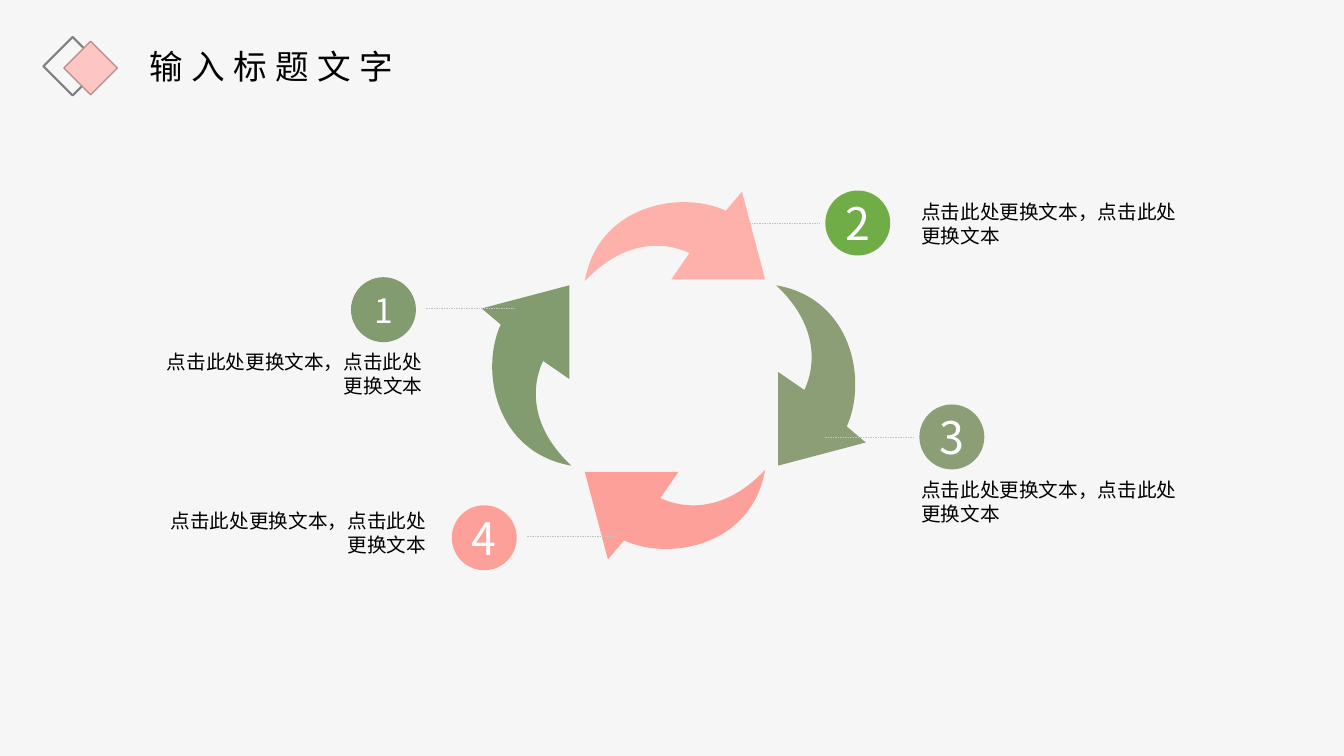
from lxml.etree import Element, SubElement
from pptx import Presentation
from pptx.dml.color import RGBColor
from pptx.enum.dml import MSO_LINE
from pptx.enum.shapes import MSO_CONNECTOR, MSO_SHAPE
from pptx.enum.text import MSO_ANCHOR, PP_ALIGN
from pptx.oxml.ns import qn
from pptx.util import Pt

TITLE = "输入标题文字"
BODY = "点击此处更换文本，点击此处更换文本"

THEME = {
    "font": "Noto Sans CJK SC",
    "background": "F6F6F6", "text": "000000", "number": "FFFFFF", "leader": "C2C2C2",
    "title_size": 24, "body_size": 14,
}

# left, top, side, fill, line colour, line width
DIAMONDS = [
    (31, 26.4, 41.8, None, "808080", 1.5),
    (45.6, 29.5, 38.2, "FDC6C2", "BB9290", 1),
]

# One arrow in its own box: corner points, then cubic curves
ARROW_WIDTH, ARROW_HEIGHT = 128.8, 64
ARROW_CORNERS = [(112.3, 0), (128.8, 62.6), (61.9, 62.6), (74.8, 43.9)]
ARROW_CURVES = [
    [(66.2, 39.6), (33.8, 28), (0, 64)],
    [(9.4, 10), (67.6, -1.5), (100.8, 13.6)],
]
# centre x, centre y, fill; each is turned a quarter further clockwise
ARROWS = [
    (482.1, 168.9, "FDB1AA"),
    (586.4, 268.2, "8B9E76"),
    (482.1, 367.6, "FDA09A"),
    (376.1, 268.2, "829C6F"),
]

# number, size, fill, circle (left, top), leader (left, y), text (left, top), alignment
CALLOUTS = [
    ("1", 24, "829C6F", (250.7, 198), (304.6, 220.3), (98.6, 250.3), PP_ALIGN.RIGHT),
    ("4", 32, "FDA09A", (322.7, 360.9), (376.6, 383.2), (101.3, 363.8), PP_ALIGN.RIGHT),
    ("2", 32, "70AD47", (589.5, 136.1), (522.7, 159.3), (650.9, 143), PP_ALIGN.LEFT),
    ("3", 32, "8B9E76", (656.7, 288.9), (589.5, 312.3), (650.9, 341.4), PP_ALIGN.LEFT),
]
CIRCLE = 46.4
LEADER_LENGTH = 63.3
BODY_WIDTH, BODY_HEIGHT = 210.2, 52


def color(name):
    return RGBColor.from_string(THEME.get(name, name))


def write(shape, text, size, ink="text", align=PP_ALIGN.LEFT,
          anchor=MSO_ANCHOR.TOP, insets=(7.2, 0), spacing=0):
    frame = shape.text_frame
    frame.word_wrap = True
    frame.vertical_anchor = anchor
    frame.margin_left = frame.margin_right = Pt(insets[0])
    frame.margin_top = frame.margin_bottom = Pt(insets[1])
    paragraph = frame.paragraphs[0]
    paragraph.alignment = align
    run = paragraph.add_run()
    run.text = text
    run.font.size = Pt(size)
    run.font.color.rgb = color(ink)
    run.font.name = THEME["font"]
    properties = run._r.get_or_add_rPr()
    SubElement(properties, qn("a:ea"), typeface=THEME["font"])
    if spacing:
        properties.set("spc", str(spacing * 100))


def paint(shape, fill=None, line=None, width=1):
    shape.shadow.inherit = False
    if fill:
        shape.fill.solid()
        shape.fill.fore_color.rgb = color(fill)
    else:
        shape.fill.background()
    if line:
        shape.line.color.rgb = color(line)
        shape.line.width = Pt(width)
    else:
        shape.line.fill.background()


def bend(shape, curves):
    """Turn the last straight segments of a freeform into cubic curves."""
    segments = list(shape._element.iter(qn("a:lnTo")))[-len(curves):]
    for segment, (first, second, _) in zip(segments, curves):
        segment.tag = qn("a:cubicBezTo")
        for index, (x, y) in enumerate((first, second)):
            segment.insert(index, Element(qn("a:pt"), x=str(int(Pt(x))), y=str(int(Pt(y)))))


def add_arrow(slide, center_x, center_y, fill, rotation):
    left, top = center_x - ARROW_WIDTH / 2, center_y - ARROW_HEIGHT / 2
    anchors = ARROW_CORNERS + [curve[-1] for curve in ARROW_CURVES]
    placed = [(Pt(left + x), Pt(top + y)) for x, y in anchors]
    builder = slide.shapes.build_freeform(*placed[0])
    builder.add_line_segments(placed[1:], close=True)
    arrow = builder.convert_to_shape()
    bend(arrow, ARROW_CURVES)
    arrow.rotation = rotation
    paint(arrow, fill)


def add_leader(shapes, left, y):
    leader = shapes.add_connector(
        MSO_CONNECTOR.STRAIGHT, Pt(left), Pt(y), Pt(left + LEADER_LENGTH), Pt(y))
    leader.line.color.rgb = color("leader")
    leader.line.width = Pt(0.25)
    leader.line.dash_style = MSO_LINE.DASH
    SubElement(leader._element.spPr, qn("a:effectLst"))


def add_callout(slide, number, size, fill, circle_at, leader_at, text_at, align):
    shapes = slide.shapes.add_group_shape().shapes
    add_leader(shapes, *leader_at)
    circle = shapes.add_shape(
        MSO_SHAPE.OVAL, *map(Pt, circle_at), Pt(CIRCLE), Pt(CIRCLE))
    paint(circle, fill)
    write(circle, number, size, ink="number", align=PP_ALIGN.CENTER,
          anchor=MSO_ANCHOR.MIDDLE, insets=(0, 0))
    body = shapes.add_textbox(*map(Pt, text_at), Pt(BODY_WIDTH), Pt(BODY_HEIGHT))
    write(body, BODY, THEME["body_size"], align=align)


def main():
    presentation = Presentation()
    presentation.slide_width, presentation.slide_height = Pt(960), Pt(540)
    slide = presentation.slides.add_slide(presentation.slide_layouts[6])
    slide.background.fill.solid()
    slide.background.fill.fore_color.rgb = color("background")

    emblem = slide.shapes.add_group_shape().shapes
    for left, top, side, fill, line, width in DIAMONDS:
        diamond = emblem.add_shape(
            MSO_SHAPE.DIAMOND, Pt(left), Pt(top), Pt(side), Pt(side))
        paint(diamond, fill, line, width)
    for turns, arrow in enumerate(ARROWS):
        add_arrow(slide, *arrow, rotation=90 * turns)
    for callout in CALLOUTS:
        add_callout(slide, *callout)
    title = slide.shapes.add_textbox(Pt(99.4), Pt(29.5), Pt(259.2), Pt(36))
    write(title, TITLE, THEME["title_size"], insets=(7.2, 3.6), spacing=6)
    presentation.save("out.pptx")


if __name__ == "__main__":
    main()
